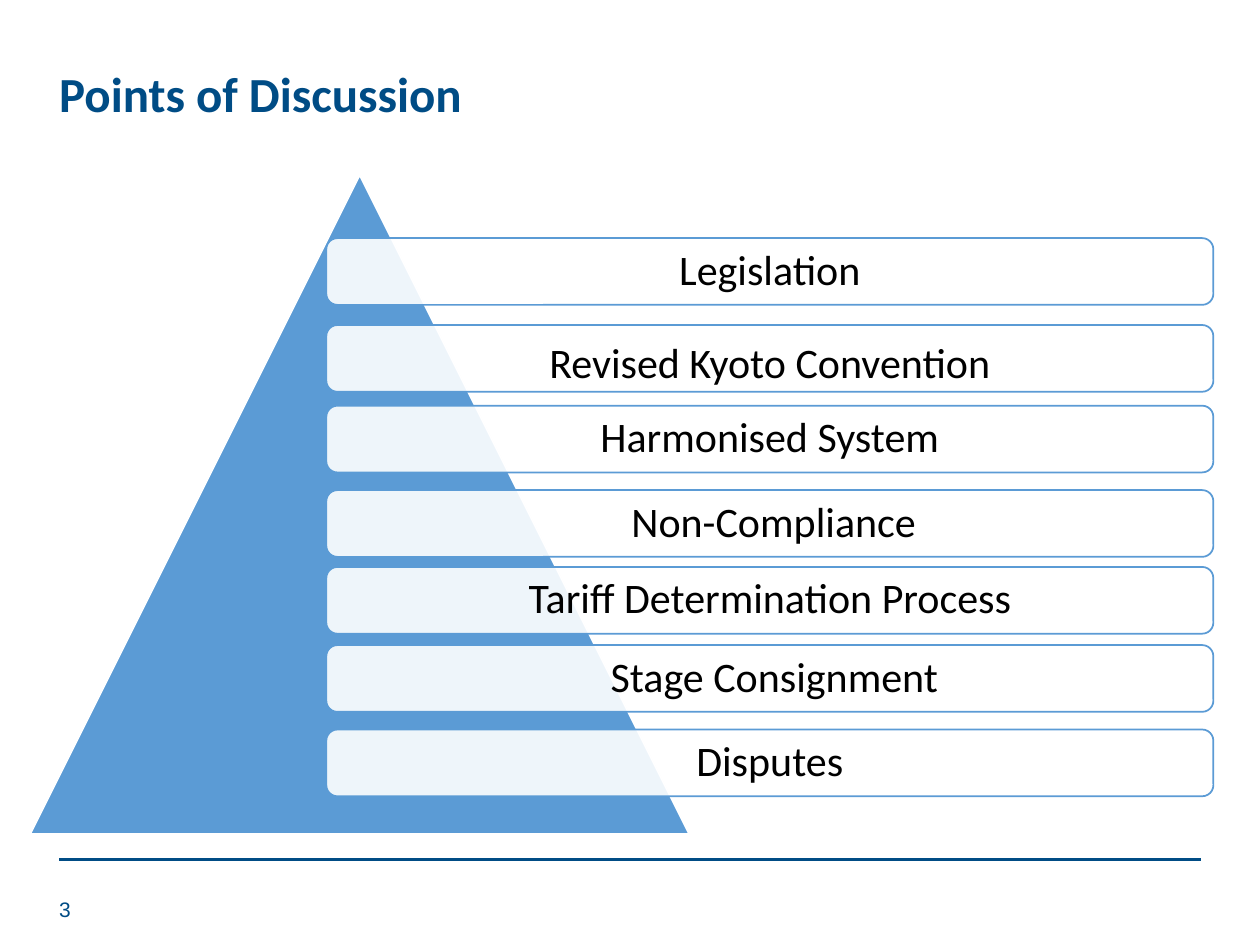
from lxml import etree
from pptx import Presentation
from pptx.dml.color import RGBColor
from pptx.enum.shapes import MSO_CONNECTOR, MSO_SHAPE
from pptx.enum.text import MSO_ANCHOR, PP_ALIGN
from pptx.oxml.ns import qn
from pptx.util import Inches, Pt

TRIANGLE = MSO_SHAPE.ISOSCELES_TRIANGLE
ROUNDED = MSO_SHAPE.ROUNDED_RECTANGLE
STRAIGHT = MSO_CONNECTOR.STRAIGHT
MIDDLE = MSO_ANCHOR.MIDDLE
LEFT, CENTER = PP_ALIGN.LEFT, PP_ALIGN.CENTER

NAVY, BLUE, WHITE, BLACK = "004C85", "5B9BD5", "FFFFFF", "000000"

# Text, top edge, and the extra left and top insets that nudge the text
POINTS = [
    ("Legislation", 1.89, 0, 0),
    ("Revised Kyoto Convention", 2.58, 0, 0.1),
    ("Harmonised System", 3.22, 0, 0),
    ("Non-Compliance", 3.89, 0.06, 0),
    ("Tariff Determination Process", 4.5, 0, 0),
    ("Stage Consignment", 5.12, 0.07, 0),
    ("Disputes", 5.79, 0, 0),
]


def color(hex_value):
    return RGBColor.from_string(hex_value)


def write(frame, text, align, ink, **font_format):
    """Fill a text frame with one vertically centred, formatted paragraph."""
    frame.word_wrap = True
    frame.vertical_anchor = MIDDLE
    paragraph = frame.paragraphs[0]
    paragraph.text = text
    paragraph.alignment = align
    paragraph.line_spacing = 0.9
    paragraph.font.color.rgb = color(ink)
    for name, value in font_format.items():
        setattr(paragraph.font, name, value)


prs = Presentation()
prs.slide_width, prs.slide_height = Inches(10), Inches(7.5)
slide = prs.slides.add_slide(prs.slide_layouts[5])
shapes = slide.shapes

footer_rule = shapes.add_connector(
    STRAIGHT, Inches(0.47), Inches(6.82), Inches(9.53), Inches(6.82))
footer_rule.line.color.rgb = color(NAVY)
footer_rule.line.width = Pt(2)
etree.SubElement(footer_rule._element.spPr, qn("a:effectLst"))

title = shapes.title
title.left, title.top = Inches(0.37), Inches(0.48)
title.width, title.height = Inches(8.62), Inches(0.58)
write(title.text_frame, "Points of Discussion", LEFT, NAVY,
      name="Calibri", size=Pt(28), bold=True)

page_number = shapes.add_textbox(
    Inches(0.37), Inches(7.03), Inches(2.25), Inches(0.4))
write(page_number.text_frame, "3", LEFT, NAVY, name="Arial", size=Pt(12))

pyramid = shapes.add_shape(
    TRIANGLE, Inches(0.24), Inches(1.39), Inches(5.23), Inches(5.23))
pyramid.shadow.inherit = False
pyramid.fill.solid()
pyramid.fill.fore_color.rgb = color(BLUE)
pyramid.line.color.rgb = color(WHITE)
pyramid.line.width = Pt(1)

for point, top, left_inset, top_inset in POINTS:
    bar = shapes.add_shape(
        ROUNDED, Inches(2.59), Inches(top), Inches(7.04), Inches(0.53))
    bar.shadow.inherit = False
    bar.fill.solid()
    bar.fill.fore_color.rgb = color(WHITE)
    fill_color = bar._element.spPr.find(qn("a:solidFill"))[0]
    etree.SubElement(fill_color, qn("a:alpha"), val="90000")
    bar.line.color.rgb = color(BLUE)
    bar.line.width = Pt(1)

    frame = bar.text_frame
    frame.margin_left, frame.margin_right = Inches(0.1 + left_inset), Inches(0.1)
    frame.margin_top, frame.margin_bottom = Inches(top_inset), 0
    write(frame, point, CENTER, BLACK, name="Calibri", size=Pt(24))

prs.save("out.pptx")
